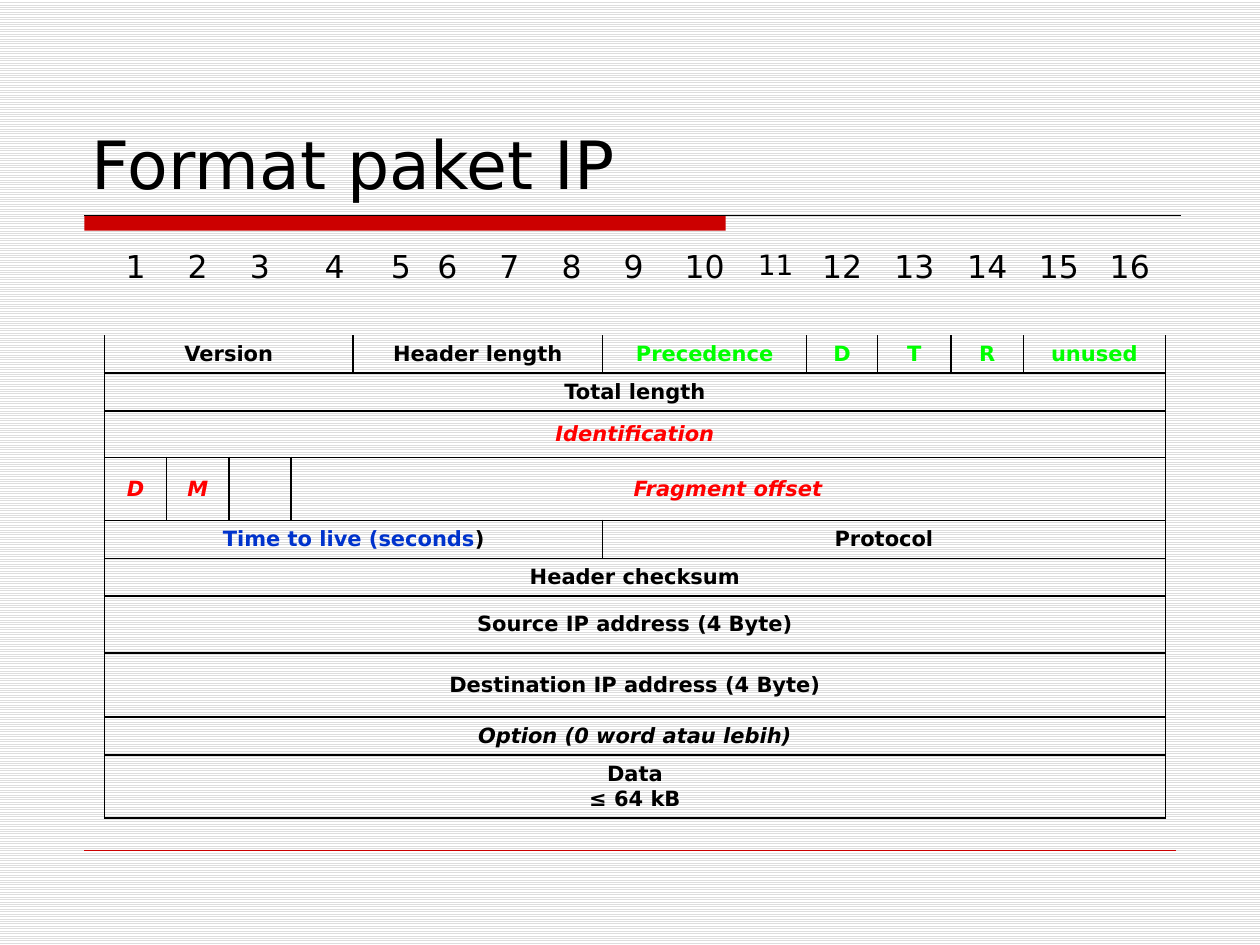
from lxml.etree import SubElement
from pptx import Presentation
from pptx.dml.color import RGBColor
from pptx.enum.dml import MSO_PATTERN
from pptx.enum.shapes import MSO_CONNECTOR, MSO_SHAPE
from pptx.enum.text import MSO_ANCHOR, PP_ALIGN
from pptx.oxml.ns import qn
from pptx.util import Inches, Pt

FONT = "DejaVu Sans"
BLACK = RGBColor(0x00, 0x00, 0x00)
WHITE = RGBColor(0xFF, 0xFF, 0xFF)
STRIPE = RGBColor(0xDD, 0xDD, 0xDD)
DARK_RED = RGBColor(0xCC, 0x00, 0x00)
RED = RGBColor(0xFF, 0x00, 0x00)
GREEN = RGBColor(0x00, 0xFF, 0x00)
BLUE = RGBColor(0x00, 0x33, 0xCC)
NO_STYLE = "{2D5ABB26-0587-4C30-8999-92F81FD0307C}"

TITLE = "Format paket IP"
TABLE_LEFT, TABLE_TOP, TABLE_WIDTH = 0.83, 1.93, 8.42
COL_SHARES = [0.49] * 4 + [0.2, 0.3] + [0.49] * 4 + [0.63, 0.49, 0.56, 0.58, 0.57, 0.56, 0.56]
HEADER_HEIGHT = 0.73

# Bit numbers; the 4 covers two columns
BITS = [(str(n), 2 if n == 4 else 1) for n in range(1, 17)]

# Packet rows: height, then cells of (columns covered, italic, runs of text and colour)
FIELDS = [
    (0.27, [(4, False, [("Version", BLACK)]),
            (5, False, [("Header length", BLACK)]),
            (3, False, [("Precedence", GREEN)]),
            (1, False, [("D", GREEN)]),
            (1, False, [("T", GREEN)]),
            (1, False, [("R", GREEN)]),
            (2, False, [("unused", GREEN)])]),
    (0.27, [(17, False, [("Total length", BLACK)])]),
    (0.37, [(17, True, [("Identification", RED)])]),
    (0.5, [(1, True, [("D", RED)]),
           (1, True, [("M", RED)]),
           (1, True, [("", RED)]),
           (14, True, [("Fragment offset", RED)])]),
    (0.27, [(9, False, [("Time to live (seconds", BLUE), (")", BLACK)]),
            (8, False, [("Protocol", BLACK)])]),
    (0.27, [(17, False, [("Header checksum", BLACK)])]),
    (0.45, [(17, False, [("Source IP address (4 Byte)", BLACK)])]),
    (0.51, [(17, False, [("Destination IP address (4 Byte)", BLACK)])]),
    (0.27, [(17, True, [("Option (0 word atau lebih)", BLACK)])]),
    (0.47, [(17, False, [("Data\n≤ 64 kB", BLACK)])]),
]


def add_rule(slide, x1, x2, y, color, width):
    line = slide.shapes.add_connector(
        MSO_CONNECTOR.STRAIGHT, Inches(x1), Inches(y), Inches(x2), Inches(y))
    line.line.color.rgb = color
    line.line.width = Pt(width)
    SubElement(line._element.spPr, qn("a:effectLst"))


def set_borders(cell, sides):
    tcPr = cell._tc.get_or_add_tcPr()
    for side in sides:
        ln = SubElement(tcPr, qn(f"a:ln{side}"), w=str(Pt(1)))
        fill = SubElement(ln, qn("a:solidFill"))
        SubElement(fill, qn("a:srgbClr"), val=str(BLACK))


def style_paragraph(p, size, bold=False, italic=False):
    p.alignment = PP_ALIGN.CENTER
    p.font.name = FONT
    p.font.size = Pt(size)
    p.font.bold = bold
    p.font.italic = italic
    pPr = p._p.get_or_add_pPr()
    pPr.set("marL", str(Inches(0.51)))
    pPr.set("indent", str(-Inches(0.51)))


def claim_cell(table, row, col, span):
    cell = table.cell(row, col)
    if span > 1:
        cell.merge(table.cell(row, col + span - 1))
    return cell


def fill_bits(table):
    col = 0
    for text, span in BITS:
        cell = claim_cell(table, 0, col, span)
        p = cell.text_frame.paragraphs[0]
        p.text = text
        style_paragraph(p, 16 if text == "11" else 18)
        p.font.color.rgb = BLACK
        col += span


def fill_fields(table):
    for row, (_, cells) in enumerate(FIELDS, start=1):
        col = 0
        for span, italic, runs in cells:
            cell = claim_cell(table, row, col, span)
            cell.vertical_anchor = MSO_ANCHOR.MIDDLE
            set_borders(cell, "LRB" if row == 1 else "LRTB")
            tf = cell.text_frame
            p = tf.paragraphs[0]
            for text, color in runs:
                for i, part in enumerate(text.split("\n")):
                    if i:
                        p = tf.add_paragraph()
                    r = p.add_run()
                    r.text = part
                    r.font.color.rgb = color
            for p in tf.paragraphs:
                style_paragraph(p, 12, bold=True, italic=italic)
            col += span


def add_packet_table(slide):
    heights = [HEADER_HEIGHT] + [height for height, _ in FIELDS]
    table = slide.shapes.add_table(
        len(heights), len(COL_SHARES), Inches(TABLE_LEFT), Inches(TABLE_TOP),
        Inches(TABLE_WIDTH), Inches(sum(heights))).table
    table.first_row = table.horz_banding = False
    table._tbl.tblPr.find(qn("a:tableStyleId")).text = NO_STYLE
    for column, share in zip(table.columns, COL_SHARES):
        column.width = Inches(TABLE_WIDTH * share / sum(COL_SHARES))
    for row, height in zip(table.rows, heights):
        row.height = Inches(height)
    fill_bits(table)
    fill_fields(table)
    for cell in table.iter_cells():
        cell.fill.background()


def main():
    prs = Presentation()
    prs.slide_width, prs.slide_height = Inches(10), Inches(7.5)
    slide = prs.slides.add_slide(prs.slide_layouts[6])

    # Striped background
    bg = slide.background.fill
    bg.patterned()
    bg.pattern = MSO_PATTERN.LIGHT_HORIZONTAL
    bg.fore_color.rgb = STRIPE
    bg.back_color.rgb = WHITE

    # Title bar and rules
    bar = slide.shapes.add_shape(
        MSO_SHAPE.RECTANGLE, Inches(0.67), Inches(1.71), Inches(5.09), Inches(0.12))
    bar.shadow.inherit = False
    bar.fill.solid()
    bar.fill.fore_color.rgb = DARK_RED
    bar.line.fill.background()
    add_rule(slide, 0.67, 9.37, 1.71, BLACK, 0.75)
    add_rule(slide, 0.67, 9.33, 6.75, DARK_RED, 0.25)

    # Title
    tf = slide.shapes.add_textbox(
        Inches(0.63), Inches(0.33), Inches(8.75), Inches(1.33)).text_frame
    tf.word_wrap = True
    tf.vertical_anchor = MSO_ANCHOR.BOTTOM
    p = tf.paragraphs[0]
    p.text = TITLE
    p.font.name = FONT
    p.font.size = Pt(38)
    p.font.color.rgb = BLACK

    add_packet_table(slide)
    prs.save("out.pptx")


if __name__ == "__main__":
    main()
